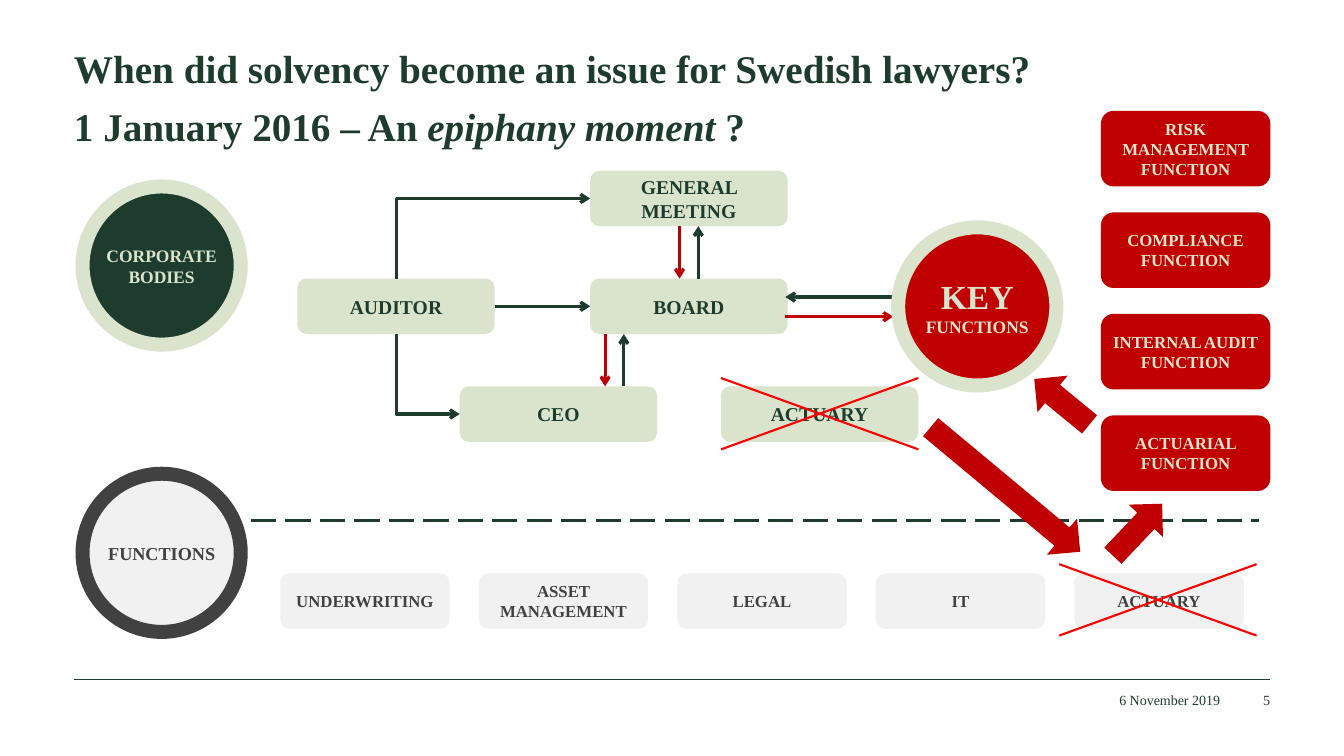
from lxml.etree import SubElement
from pptx import Presentation
from pptx.dml.color import RGBColor
from pptx.enum.dml import MSO_LINE
from pptx.enum.shapes import MSO_CONNECTOR, MSO_SHAPE
from pptx.enum.text import MSO_ANCHOR, PP_ALIGN
from pptx.oxml.ns import qn
from pptx.util import Pt

GREEN = RGBColor(0x1E, 0x3C, 0x2D)
PALE = RGBColor(0xDA, 0xE4, 0xCC)
RED = RGBColor(0xC0, 0x00, 0x00)
CROSS = RGBColor(0xFF, 0x00, 0x00)
GREY = RGBColor(0x41, 0x41, 0x41)
LIGHT = RGBColor(0xF1, 0xF1, 0xF1)


def write(shape, runs, size=12, color=GREEN, bold=True, align=PP_ALIGN.CENTER,
          anchor=MSO_ANCHOR.MIDDLE, inset=0, font="Times New Roman"):
    frame = shape.text_frame
    frame.word_wrap = True
    frame.vertical_anchor = anchor
    frame.margin_left = frame.margin_right = Pt(inset)
    frame.margin_top = frame.margin_bottom = Pt(inset)
    para = frame.paragraphs[0]
    para.alignment = align
    if isinstance(runs, str):
        runs = [(runs, {})]
    for words, extra in runs:
        run = para.add_run()
        run.text = words
        run.font.name = font
        run.font.bold = bold
        run.font.size = Pt(extra.get("size", size))
        run.font.italic = extra.get("italic", False)
        run.font.color.rgb = color


class Page:
    def __init__(self, slide):
        self.shapes = slide.shapes

    def label(self, spot, runs, **style):
        box = self.shapes.add_textbox(*map(Pt, spot))
        write(box, runs, **style)

    def shape(self, kind, spot, fill, edge=None):
        item = self.shapes.add_shape(kind, *map(Pt, spot))
        item.shadow.inherit = False
        item.fill.solid()
        item.fill.fore_color.rgb = fill
        if edge is None:
            item.line.fill.background()
        else:
            item.line.color.rgb = edge
            item.line.width = Pt(10)
        return item

    def box(self, spot, words, fill, **style):
        item = self.shape(MSO_SHAPE.ROUNDED_RECTANGLE, spot, fill)
        write(item, words, inset=2.88, **style)

    def disc(self, left, top, runs, fill, edge, **style):
        item = self.shape(MSO_SHAPE.OVAL, (left, top, 113, 113), fill, edge)
        write(item, runs, **style)

    def block(self, spot, turn):
        item = self.shape(MSO_SHAPE.DOWN_ARROW, spot, RED)
        item.rotation = turn

    def line(self, start, end, color=GREEN, width=2.25, tip=None, bent=False, dash=None):
        kind = MSO_CONNECTOR.ELBOW if bent else MSO_CONNECTOR.STRAIGHT
        item = self.shapes.add_connector(kind, *map(Pt, start + end))
        item.line.color.rgb = color
        item.line.width = Pt(width)
        if dash:
            item.line.dash_style = dash
        props = item._element.spPr
        if bent:
            props.find(qn("a:prstGeom")).set("prst", "bentConnector2")
        if tip:
            SubElement(props.find(qn("a:ln")), qn("a:" + tip), type="arrow")
        SubElement(props, qn("a:effectLst"))

    def cross(self, left, top):
        right, low = left + 141, top + 51
        self.line((left, low), (right, top), CROSS, 1.5)
        self.line((right, low), (left, top), CROSS, 1.5)


def main():
    deck = Presentation()
    deck.slide_width, deck.slide_height = Pt(960), Pt(540)
    page = Page(deck.slides.add_slide(deck.slide_layouts[6]))

    page.line((52.8, 485.4), (907.2, 485.4), width=0.5)
    page.label((52.8, 11.5, 854, 54), "When did solvency become an issue for Swedish lawyers?",
               size=28, align=PP_ALIGN.LEFT, anchor=MSO_ANCHOR.BOTTOM)
    page.label((52.8, 73, 854, 36.7),
               [("1 January 2016 – An ", {}), ("epiphany moment ", {"italic": True}), ("?", {})],
               size=28, align=PP_ALIGN.LEFT, anchor=MSO_ANCHOR.TOP)
    for left, width, words in ((762, 109.4, "6 November 2019"), (877, 30.2, "5")):
        page.label((left, 493.4, width, 13), words, size=10, bold=False, align=PP_ALIGN.RIGHT)

    page.disc(59, 133.2, "CORPORATE BODIES", GREEN, PALE, size=12.5, color=PALE)
    bodies = (("GENERAL MEETING", 421.6, 0), ("AUDITOR", 212.4, 1), ("BOARD", 421.6, 1),
              ("CEO", 328.4, 2), ("ACTUARY", 515, 2))
    for words, left, row in bodies:
        page.box((left, 122 + 77 * row, 141, 39.6), words, PALE, size=14)

    page.line((421.6, 141.8), (283, 199), tip="headEnd", bent=True)
    page.line((328.4, 295.8), (283, 238.6), tip="headEnd", bent=True)
    page.line((353.4, 218.8), (421.6, 218.8), tip="tailEnd")
    for left, top in ((432.2, 238.6), (485.4, 161.6)):
        low = top + 37.4
        page.line((left + 13.4, low), (left + 13.4, top), tip="tailEnd")
        page.line((left, top), (left, low), RED, tip="tailEnd")
    page.cross(515, 270)

    page.disc(59, 338.4, "FUNCTIONS", LIGHT, GREY, size=13, color=GREY)
    page.line((179.3, 372), (899.3, 372), dash=MSO_LINE.LONG_DASH)
    units = ("UNDERWRITING", "ASSET MANAGEMENT", "LEGAL", "IT", "ACTUARY")
    for col, words in enumerate(units):
        page.box((200.2 + 141.8 * col, 409.6, 121, 39.6), words, LIGHT, color=GREY)

    page.line((638, 212.2), (561, 212.2), tip="tailEnd")
    page.line((561, 226.2), (638, 226.2), RED, tip="tailEnd")
    page.disc(641.6, 162.4, [("KEY", {"size": 24}), (" FUNCTIONS", {})], RED, PALE,
              size=12.5, color=PALE)
    page.cross(756.6, 403)

    keys = ("RISK MANAGEMENT", "COMPLIANCE", "INTERNAL AUDIT", "ACTUARIAL")
    for row, words in enumerate(keys):
        page.box((786.4, 79.2 + 72.5 * row, 121, 54), words + " FUNCTION", RED, color=PALE)

    page.block((701.3, 280.1, 33.8, 139), 309.8)
    page.block((795.6, 352.8, 33.8, 51.1), 223.4)
    page.block((741.6, 261.4, 33.8, 51.1), 129.4)

    deck.save("out.pptx")


if __name__ == "__main__":
    main()
